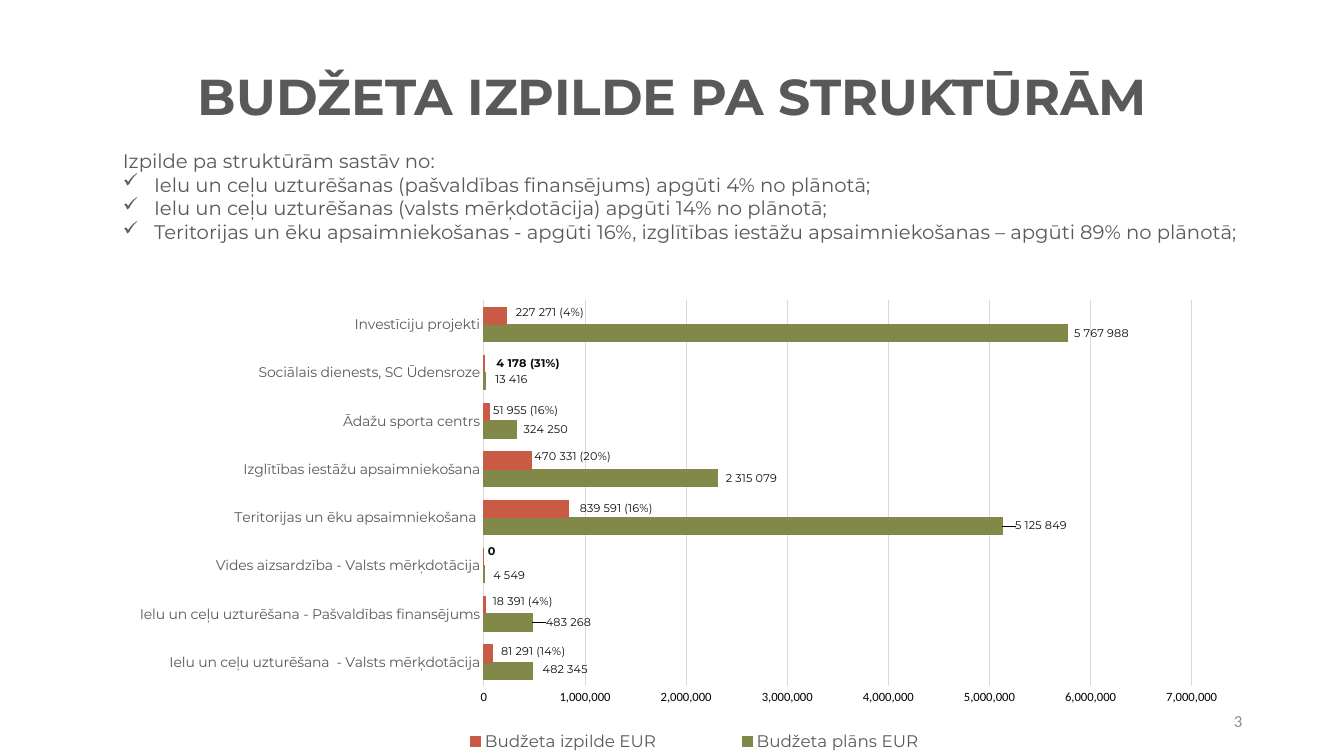
from dataclasses import dataclass
from typing import Any

from lxml.etree import SubElement
from pptx import Presentation
from pptx.chart.data import CategoryChartData
from pptx.dml.color import RGBColor
from pptx.enum.chart import XL_CHART_TYPE, XL_LABEL_POSITION, XL_LEGEND_POSITION, XL_TICK_MARK
from pptx.enum.text import MSO_ANCHOR, MSO_AUTO_SIZE, PP_ALIGN
from pptx.oxml import parse_xml
from pptx.oxml.ns import nsdecls, qn
from pptx.util import Pt

PX = 9144  # 100 px to the inch


@dataclass(frozen=True)
class Theme:
    heading: str = "Montserrat"
    plain: str = "Calibri"
    text: str = "595959"
    muted: str = "8C8C8C"
    label: str = "0D0D0D"
    axis: str = "000000"
    grid: str = "D9D9D9"
    plan: str = "828847"
    spent: str = "C95B46"
    title_size: int = 36
    body_size: int = 14
    legend_size: int = 12
    category_size: int = 10
    axis_size: int = 9
    label_size: int = 8


@dataclass(frozen=True)
class Box:
    x: int
    y: int
    w: int
    h: int

    def emu(self) -> tuple[int, ...]:
        return tuple(v * PX for v in (self.x, self.y, self.w, self.h))


@dataclass(frozen=True)
class Structure:
    """Budget of one structure; shifts move its labels from the bar end, in px."""
    name: str
    plan: int
    spent: int
    share: int | None
    plan_shift: tuple[int, int]
    spent_shift: tuple[int, int]
    bold: bool = False


THEME = Theme()
CHART = Box(112, 272, 1108, 478)
PLOT = Box(368, 26, 702, 383)
LEGEND = Box(275, 449, 604, 29)

STRUCTURES = [
    Structure("Ielu un ceļu uzturēšana  - Valsts mērķdotācija",
              482345, 81291, 14, (6, -2), (5, -2)),
    Structure("Ielu un ceļu uzturēšana - Pašvaldības finansējums",
              483268, 18391, 4, (9, 0), (3, -4)),
    Structure("Vides aizsardzība - Valsts mērķdotācija",
              4549, 0, None, (5, 1), (0, -6), bold=True),
    Structure("Teritorijas un ēku apsaimniekošana ",
              5125849, 839591, 16, (9, -1), (7, -1)),
    Structure("Izglītības iestāžu apsaimniekošana",
              2315079, 470331, 20, (4, 0), (-1, -4)),
    Structure("Ādažu sporta centrs",
              324250, 51955, 16, (3, 0), (0, -2)),
    Structure("Sociālais dienests, SC Ūdensroze",
              13416, 4178, 31, (6, -2), (8, -1), bold=True),
    Structure("Investīciju projekti",
              5767988, 227271, 4, (3, 0), (5, -4)),
]

INTRO = "Izpilde pa struktūrām sastāv no:"
POINTS = [
    "Ielu un ceļu uzturēšanas (pašvaldības finansējums) apgūti 4% no plānotā;",
    "Ielu un ceļu uzturēšanas (valsts mērķdotācija) apgūti 14% no plānotā;",
    "Teritorijas un ēku apsaimniekošanas - apgūti 16%, izglītības iestāžu "
    "apsaimniekošanas – apgūti 89% no plānotā;",
]


def style(font: Any, size: int, color: str, name: str = THEME.heading,
          bold: bool = False) -> None:
    font.size, font.name, font.bold = Pt(size), name, bold
    font.color.rgb = RGBColor.from_string(color)


def add_bullet(p: Any, indent: int = 31) -> None:
    pPr = p._p.get_or_add_pPr()
    pPr.set("marL", str(indent * PX))
    pPr.set("indent", str(-indent * PX))
    SubElement(pPr, qn("a:buChar")).set("char", "✓")


def add_text(slide: Any, box: Box, lines: list[str], *, size: int,
             color: str = THEME.text, name: str = THEME.heading, bold: bool = False,
             align: PP_ALIGN = PP_ALIGN.LEFT, anchor: MSO_ANCHOR = MSO_ANCHOR.TOP,
             spacing: float = 1.0, bullets_from: int | None = None,
             grow: bool = False) -> None:
    tf = slide.shapes.add_textbox(*box.emu()).text_frame
    tf.word_wrap, tf.vertical_anchor = True, anchor
    tf.auto_size = MSO_AUTO_SIZE.SHAPE_TO_FIT_TEXT if grow else MSO_AUTO_SIZE.NONE
    for i, line in enumerate(lines):
        p = tf.add_paragraph() if i else tf.paragraphs[0]
        p.alignment, p.line_spacing = align, spacing
        if bullets_from is not None and i >= bullets_from:
            add_bullet(p)
        r = p.add_run()
        r.text = line
        style(r.font, size, color, name, bold)


def set_layout(parent: Any, index: int, fields: dict[str, str | float]) -> None:
    """Give a chart part a manual layout as its child at the index."""
    for old in parent.findall(qn("c:layout")):
        parent.remove(old)
    layout = parse_xml(f"<c:layout {nsdecls('c')}><c:manualLayout/></c:layout>")
    for tag, value in fields.items():
        SubElement(layout[0], qn(f"c:{tag}")).set("val", str(value))
    parent.insert(index, layout)


def edges(box: Box) -> dict[str, str | float]:
    return {"xMode": "edge", "yMode": "edge",
            "x": box.x / CHART.w, "y": box.y / CHART.h,
            "w": box.w / CHART.w, "h": box.h / CHART.h}


def add_label(series: Any, index: int, value: int, share: int | None,
              shift: tuple[int, int], bold: bool) -> None:
    label = series.points[index].data_label
    if value:
        r = label.text_frame.paragraphs[0].add_run()
        r.text = f"{value:,}".replace(",", " ") + (f" ({share}%)" if share else "")
        style(r.font, THEME.label_size, THEME.label, bold=bold)
    else:
        style(label.font, THEME.label_size, THEME.label, bold=bold)
    label.position = XL_LABEL_POSITION.OUTSIDE_END
    dLbl = series._element.xpath(f"c:dLbls/c:dLbl[c:idx/@val='{index}']")[0]
    set_layout(dLbl, 1, {"x": shift[0] / CHART.w, "y": shift[1] / CHART.h})


def format_series(series: Any, color: str) -> None:
    rgb = RGBColor.from_string(color)
    series.invert_if_negative = False
    series.format.fill.solid()
    series.format.fill.fore_color.rgb = rgb
    series.format.line.color.rgb = rgb
    series.format.line.width = Pt(0.75)
    labels = series.data_labels
    labels.show_value = True
    labels.number_format, labels.number_format_is_linked = "#,##0", False
    style(labels.font, THEME.label_size, THEME.label, bold=True)


def format_axes(chart: Any) -> None:
    cat, val = chart.category_axis, chart.value_axis
    for axis in (cat, val):
        axis.major_tick_mark = axis.minor_tick_mark = XL_TICK_MARK.NONE
        axis.format.line.fill.background()
    cat.has_major_gridlines = False
    style(cat.tick_labels.font, THEME.category_size, THEME.text)
    val.minimum_scale, val.maximum_scale, val.major_unit = 0, 7_000_000, 1_000_000
    val.tick_labels.number_format = "#,##0"
    val.tick_labels.number_format_is_linked = False
    style(val.tick_labels.font, THEME.axis_size, THEME.axis, THEME.plain)
    grid = val.major_gridlines.format.line
    grid.color.rgb, grid.width = RGBColor.from_string(THEME.grid), Pt(0.75)


def add_budget_chart(slide: Any) -> None:
    data = CategoryChartData(number_format="#,##0")
    data.categories = [s.name for s in STRUCTURES]
    data.add_series("Budžeta plāns EUR", [s.plan for s in STRUCTURES])
    data.add_series("Budžeta izpilde EUR", [s.spent for s in STRUCTURES])
    chart = slide.shapes.add_chart(XL_CHART_TYPE.BAR_CLUSTERED, *CHART.emu(), data).chart
    chart.has_title = False
    style(chart.font, THEME.category_size, THEME.axis, THEME.plain)
    plot = chart.plots[0]
    plot.gap_width, plot.vary_by_categories = 80, False
    format_axes(chart)
    plan, spent = plot.series
    format_series(plan, THEME.plan)
    format_series(spent, THEME.spent)
    for i, s in enumerate(STRUCTURES):
        add_label(plan, i, s.plan, None, s.plan_shift, False)
        add_label(spent, i, s.spent, s.share, s.spent_shift, s.bold)
    chart.has_legend = True
    legend = chart.legend
    legend.position, legend.include_in_layout = XL_LEGEND_POSITION.BOTTOM, False
    style(legend.font, THEME.legend_size, THEME.text)
    set_layout(legend._element, 1, edges(LEGEND))
    plot_area = chart._chartSpace.chart.plotArea
    set_layout(plot_area, 0, {"layoutTarget": "inner"} | edges(PLOT))


def main() -> None:
    prs = Presentation()
    prs.slide_width, prs.slide_height = 1333 * PX, 750 * PX
    slide = prs.slides.add_slide(prs.slide_layouts[6])
    add_text(slide, Box(92, 26, 1150, 145), ["BUDŽETA IZPILDE PA STRUKTŪRĀM"],
             size=THEME.title_size, bold=True, align=PP_ALIGN.CENTER,
             anchor=MSO_ANCHOR.MIDDLE, spacing=0.9)
    add_text(slide, Box(942, 695, 300, 40), ["3"], size=THEME.legend_size,
             color=THEME.muted, name=THEME.plain, align=PP_ALIGN.RIGHT,
             anchor=MSO_ANCHOR.MIDDLE)
    add_budget_chart(slide)
    add_text(slide, Box(112, 143, 1166, 104), [INTRO, *POINTS],
             size=THEME.body_size, bullets_from=1, grow=True)
    prs.save("out.pptx")


if __name__ == "__main__":
    main()
